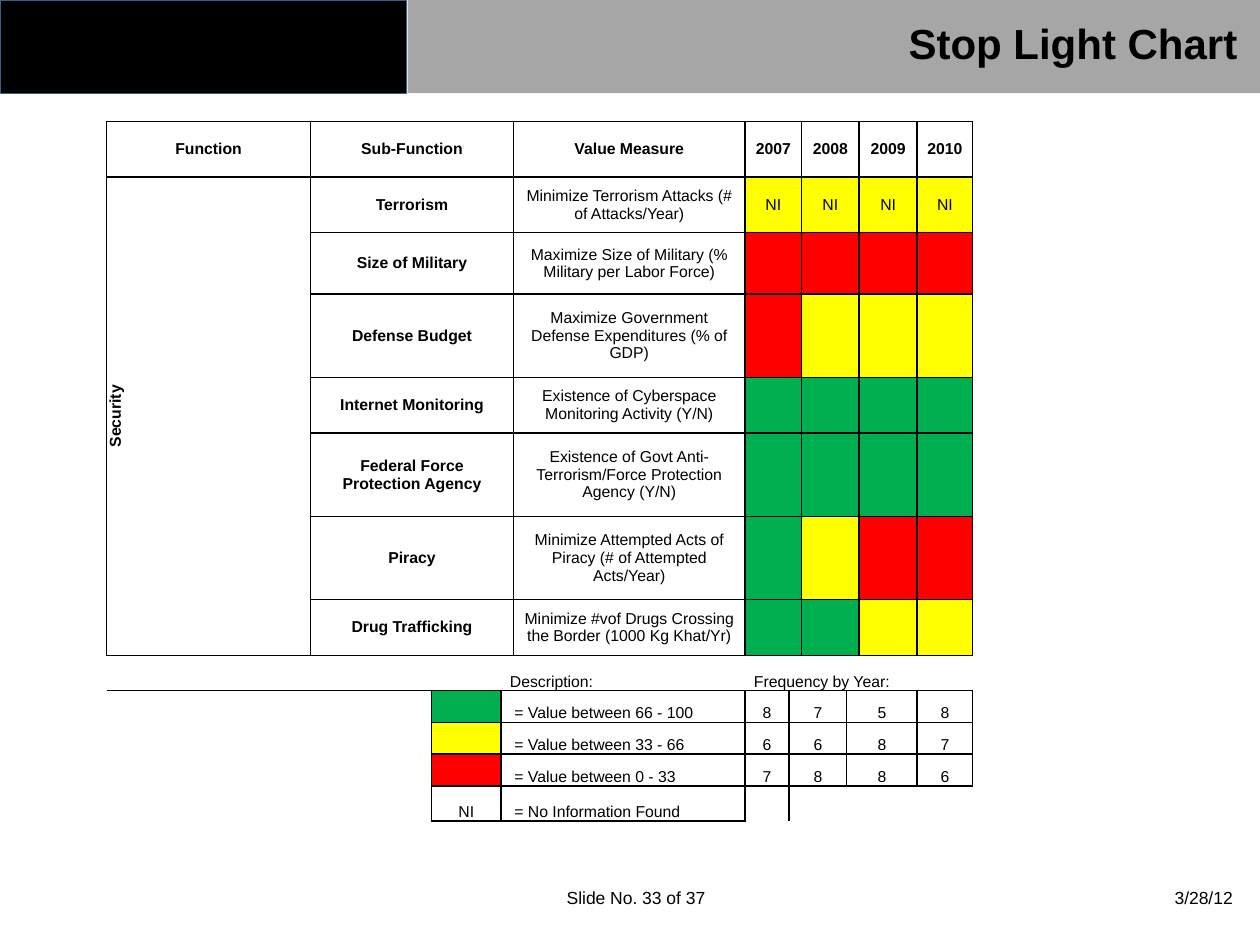
from lxml.etree import SubElement
from pptx import Presentation
from pptx.dml.color import RGBColor
from pptx.enum.shapes import MSO_SHAPE as Shape
from pptx.enum.text import MSO_ANCHOR as Anchor, PP_ALIGN as Align
from pptx.oxml import parse_xml
from pptx.oxml.ns import nsdecls, qn
from pptx.util import Cm, Pt

COLORS = {
    "black": "000000", "gray": "A6A6A6", "outline": "3A5F8C",
    "G": "00B050", "Y": "FFFF00", "R": "FF0000",
}
FONT = "Arial"
NO_STYLE = "{2D5ABB26-0587-4C30-8999-92F81FD0307C}"
COLUMNS = [4.11, 1.98, 0.43, 1.4, 0.25, 4.67, 0.89, 0.25, 0.91, 0.25, 1.17, 1.12]
ROWS = [1.12, 1.12, 1.24, 1.68, 1.12, 1.68, 1.68, 1.12, 0.71, 0.64, 0.64, 0.64, 0.71]
YEAR_SPANS = [(6, 7), (8, 9), (10, 10), (11, 11)]
COUNT_SPANS = [(6, 6), (7, 8), (9, 10), (11, 11)]
YEARS = ["2007", "2008", "2009", "2010"]
MEASURES = [
    ("Terrorism", "Minimize Terrorism Attacks (# of Attacks/Year)", "YYYY", "NI"),
    ("Size of Military", "Maximize Size of Military (% Military per Labor Force)", "RRRR", ""),
    ("Defense Budget", "Maximize Government Defense Expenditures (% of GDP)", "RYYY", ""),
    ("Internet Monitoring", "Existence of Cyberspace Monitoring Activity (Y/N)", "GGGG", ""),
    ("Federal Force Protection Agency",
     "Existence of Govt Anti-Terrorism/Force Protection Agency (Y/N)", "GGGG", ""),
    ("Piracy", "Minimize Attempted Acts of Piracy (# of Attempted Acts/Year)", "GYRR", ""),
    ("Drug Trafficking", "Minimize #vof Drugs Crossing the Border (1000 Kg Khat/Yr)", "GGYY", ""),
]
LEGEND = [
    ("G", "", "= Value between 66 - 100", "8758"),
    ("Y", "", "= Value between 33 - 66", "6687"),
    ("R", "", "= Value between 0 - 33", "7886"),
    (None, "NI", "= No Information Found", ""),
]


def color(name):
    """Return the named colour."""
    return RGBColor.from_string(COLORS[name])


def add_run(paragraph, text, size, bold=False):
    """Add one formatted run to a paragraph."""
    run = paragraph.add_run()
    run.text = text
    run.font.name = FONT
    run.font.size = Pt(size)
    run.font.bold = bold
    run.font.color.rgb = color("black")


def add_band(slide, left, width, fill, outline=None):
    """Add one rectangle of the header band."""
    shape = slide.shapes.add_shape(Shape.RECTANGLE, Cm(left), Cm(0), Cm(width), Cm(1.88))
    shape.shadow.inherit = False
    shape.fill.solid()
    shape.fill.fore_color.rgb = color(fill)
    if outline:
        shape.line.color.rgb = color(outline)
        shape.line.width = Pt(0.25)
    else:
        shape.line.fill.background()


def set_title(slide, text):
    """Place and fill the title placeholder."""
    title = slide.shapes.title
    title.left, title.top, title.width, title.height = Cm(8.08), Cm(0.23), Cm(17.12), Cm(1.9)
    title.text_frame.vertical_anchor = Anchor.TOP
    paragraph = title.text_frame.paragraphs[0]
    paragraph.alignment = Align.RIGHT
    add_run(paragraph, text, 24, True)


def add_footer(slide, text, left, width, alignment):
    """Add one text of the footer line."""
    box = slide.shapes.add_textbox(Cm(left), Cm(17.72), Cm(width), Cm(0.75))
    box.text_frame.word_wrap = True
    box.text_frame.vertical_anchor = Anchor.MIDDLE
    paragraph = box.text_frame.paragraphs[0]
    paragraph.alignment = alignment
    add_run(paragraph, text, 10)


def set_borders(cell, sides):
    """Draw black lines on the given sides of a cell."""
    properties = cell._tc.get_or_add_tcPr()
    for index, side in enumerate(side for side in "LRTB" if side in sides):
        properties.insert(index, parse_xml(
            f'<a:ln{side} {nsdecls("a")} w="12700"><a:solidFill>'
            f'<a:srgbClr val="{COLORS["black"]}"/></a:solidFill></a:ln{side}>'))


def set_cell(table, row, span, text="", bold=False, fill=None, sides="LRTB",
             alignment=Align.CENTER, anchor=Anchor.MIDDLE, indent=0.18, last_row=None):
    """Merge, fill, border and write one cell, and return it."""
    first, last = span
    cell = table.cell(row, first)
    end = table.cell(last_row or row, last)
    if end is not cell and (first != last or last_row):
        cell.merge(end)
    cell.margin_left, cell.margin_right = Cm(indent), Cm(0.18)
    cell.margin_top = cell.margin_bottom = Cm(0)
    cell.vertical_anchor = anchor
    if fill:
        cell.fill.solid()
        cell.fill.fore_color.rgb = color(fill)
    else:
        cell.fill.background()
    set_borders(cell, sides)
    paragraph = cell.text_frame.paragraphs[0]
    paragraph.alignment = alignment
    if text:
        add_run(paragraph, text, 9, bold)
    else:
        SubElement(paragraph._p, qn("a:endParaRPr")).set("sz", "900")
    return cell


def fill_measures(table):
    """Write the header row and the rated measures."""
    header_spans = [(0, 0), (1, 4), (5, 5)] + YEAR_SPANS
    for span, text in zip(header_spans, ["Function", "Sub-Function", "Value Measure"] + YEARS):
        set_cell(table, 0, span, text, True)
    security = set_cell(table, 1, (0, 0), "Security", True, last_row=len(MEASURES))
    security._tc.get_or_add_tcPr().set("vert", "vert270")
    for row, (name, measure, ratings, note) in enumerate(MEASURES, 1):
        set_cell(table, row, (1, 4), name, True)
        set_cell(table, row, (5, 5), measure)
        for span, rating in zip(YEAR_SPANS, ratings):
            set_cell(table, row, span, note, fill=rating)


def fill_legend(table):
    """Write the colour legend and the frequencies."""
    top = len(MEASURES) + 1
    left = {"alignment": Align.LEFT, "anchor": Anchor.BOTTOM}
    for span, text, sides in [((0, 1), "", "T"), ((2, 2), "", "T"), ((3, 3), "", "TB"),
                              ((4, 5), "Description:", "TB"),
                              ((6, 10), "Frequency by Year:", "TB"), ((11, 11), "", "TB")]:
        set_cell(table, top, span, text, sides=sides, **left)
    for row, (fill, mark, meaning, counts) in enumerate(LEGEND, top + 1):
        set_cell(table, row, (0, 1), sides="")
        set_cell(table, row, (2, 2), sides="R")
        set_cell(table, row, (3, 3), mark, fill=fill, anchor=Anchor.BOTTOM)
        set_cell(table, row, (4, 5), meaning, indent=0.27, **left)
        for index, span in enumerate(COUNT_SPANS):
            sides = "LRTB" if counts else "T" if index else "LT"
            set_cell(table, row, span, counts[index:index + 1], sides=sides, anchor=Anchor.BOTTOM)


def add_stop_light_table(slide):
    """Add the table of ratings with its legend."""
    frame = slide.shapes.add_table(len(ROWS), len(COLUMNS), Cm(2.15), Cm(2.45),
                                   Cm(sum(COLUMNS)), Cm(sum(ROWS)))
    table = frame.table
    table.first_row = table.horz_banding = False
    table._tbl.tblPr.find(qn("a:tableStyleId")).text = NO_STYLE
    for column, width in zip(table.columns, COLUMNS):
        column.width = Cm(width)
    for row, height in zip(table.rows, ROWS):
        row.height = Cm(height)
    fill_measures(table)
    fill_legend(table)


def main():
    """Build and save the slide."""
    presentation = Presentation()
    presentation.slide_width, presentation.slide_height = Cm(25.4), Cm(19.05)
    slide = presentation.slides.add_slide(presentation.slide_layouts[5])
    add_band(slide, 0, 8.2, "black", "outline")
    add_band(slide, 8.22, 17.18, "gray")
    slide.shapes._spTree.append(slide.shapes.title._element)
    set_title(slide, "Stop Light Chart")
    add_stop_light_table(slide)
    add_footer(slide, "Slide No. 33 of 37", 10.32, 5, Align.CENTER)
    add_footer(slide, "3/28/12", 22.1, 3, Align.RIGHT)
    presentation.save("out.pptx")


if __name__ == "__main__":
    main()
